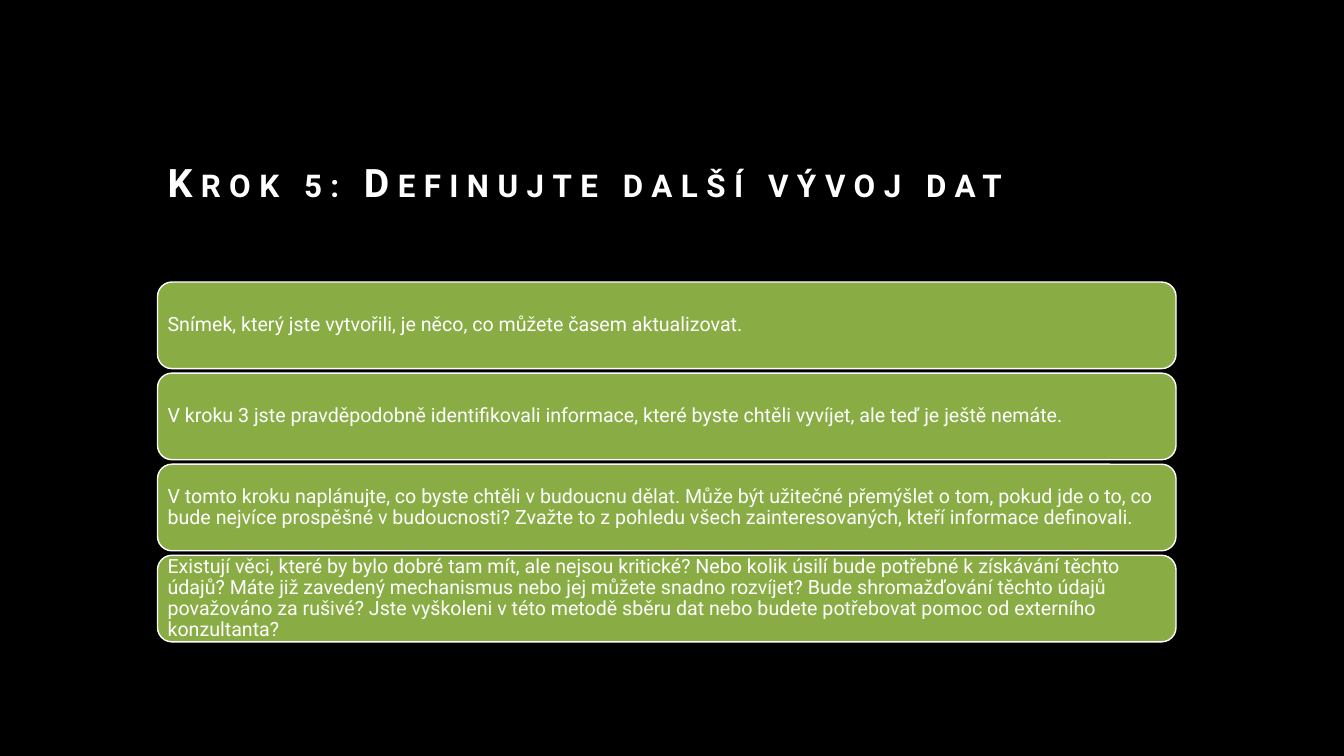
from dataclasses import dataclass

from pptx import Presentation
from pptx.dml.color import RGBColor
from pptx.enum.shapes import MSO_SHAPE
from pptx.enum.text import MSO_ANCHOR, MSO_AUTO_SIZE, PP_ALIGN
from pptx.util import Pt


@dataclass(frozen=True)
class Theme:
    """Colours, font and type sizes of the slide."""

    background: RGBColor = RGBColor(0x00, 0x00, 0x00)
    card: RGBColor = RGBColor(0x89, 0xAD, 0x44)
    text: RGBColor = RGBColor(0xFF, 0xFF, 0xFF)
    font: str = "Roboto"
    title_size: int = 28
    body_size: int = 14


THEME = Theme()
TITLE = "Krok 5: Definujte další vývoj dat"
CARDS = [
    "Snímek, který jste vytvořili, je něco, co můžete časem aktualizovat.",
    "V kroku 3 jste pravděpodobně identifikovali informace, které byste chtěli "
    "vyvíjet, ale teď je ještě nemáte.",
    "V tomto kroku naplánujte, co byste chtěli v budoucnu dělat. Může být užitečné "
    "přemýšlet o tom, pokud jde o to, co bude nejvíce prospěšné v budoucnosti? "
    "Zvažte to z pohledu všech zainteresovaných, kteří informace definovali.",
    "Existují věci, které by bylo dobré tam mít, ale nejsou kritické? Nebo kolik "
    "úsilí bude potřebné k získávání těchto údajů? Máte již zavedený mechanismus "
    "nebo jej můžete snadno rozvíjet? Bude shromažďování těchto údajů považováno za "
    "rušivé? Jste vyškoleni v této metodě sběru dat nebo budete potřebovat pomoc od "
    "externího konzultanta?",
]


def write_text(shape, text, *, size, anchor, margins, line_spacing,
               space_after=0, bold=False, tracking=0, small_caps=False):
    """Fill a shape with one formatted, left-aligned paragraph."""
    frame = shape.text_frame
    frame.word_wrap = True
    frame.auto_size = MSO_AUTO_SIZE.NONE
    frame.vertical_anchor = anchor
    frame.margin_left = frame.margin_right = Pt(margins[0])
    frame.margin_top = frame.margin_bottom = Pt(margins[1])
    para = frame.paragraphs[0]
    para.alignment = PP_ALIGN.LEFT
    para.line_spacing = line_spacing
    para.space_before = Pt(0)
    para.space_after = Pt(space_after)
    span = para.add_run()
    span.text = text
    span.font.name = THEME.font
    span.font.size = Pt(size)
    span.font.bold = bold
    span.font.color.rgb = THEME.text
    if tracking:
        span.font._element.set("spc", str(tracking * 100))
    if small_caps:
        span.font._element.set("cap", "small")


def place_title(page, text, left, top, width, height):
    """Move the title placeholder into the given box and write it."""
    title = page.shapes.title
    title.left, title.top = Pt(left), Pt(top)
    title.width, title.height = Pt(width), Pt(height)
    write_text(title, text, size=THEME.title_size, anchor=MSO_ANCHOR.BOTTOM,
               margins=(7.2, 3.6), line_spacing=1.2, bold=True,
               tracking=6, small_caps=True)


def place_cards(page, texts, left, top, width, height, gap):
    """Stack equal rounded cards that fill the given box."""
    card_height = (height - gap * (len(texts) - 1)) / len(texts)
    for index, text in enumerate(texts):
        card_top = top + index * (card_height + gap)
        card = page.shapes.add_shape(MSO_SHAPE.ROUNDED_RECTANGLE, Pt(left),
                                     Pt(card_top), Pt(width), Pt(card_height))
        card.shadow.inherit = False
        card.fill.solid()
        card.fill.fore_color.rgb = THEME.card
        card.line.color.rgb = THEME.text
        card.line.width = Pt(1)
        write_text(card, text, size=THEME.body_size, anchor=MSO_ANCHOR.MIDDLE,
                   margins=(4.2, 4.2), line_spacing=0.9,
                   space_after=0.35 * THEME.body_size)


def main():
    """Build and save the slide."""
    deck = Presentation()
    deck.slide_width, deck.slide_height = Pt(960), Pt(540)
    page = deck.slides.add_slide(deck.slide_layouts.get_by_name("Title Only"))
    page.background.fill.solid()
    page.background.fill.fore_color.rgb = THEME.background
    left, width = 112.5, 727.5
    place_title(page, TITLE, left, 82, width, 68)
    place_cards(page, CARDS, left, 201.5, width, 257, gap=3.2)
    deck.save("out.pptx")


if __name__ == "__main__":
    main()
